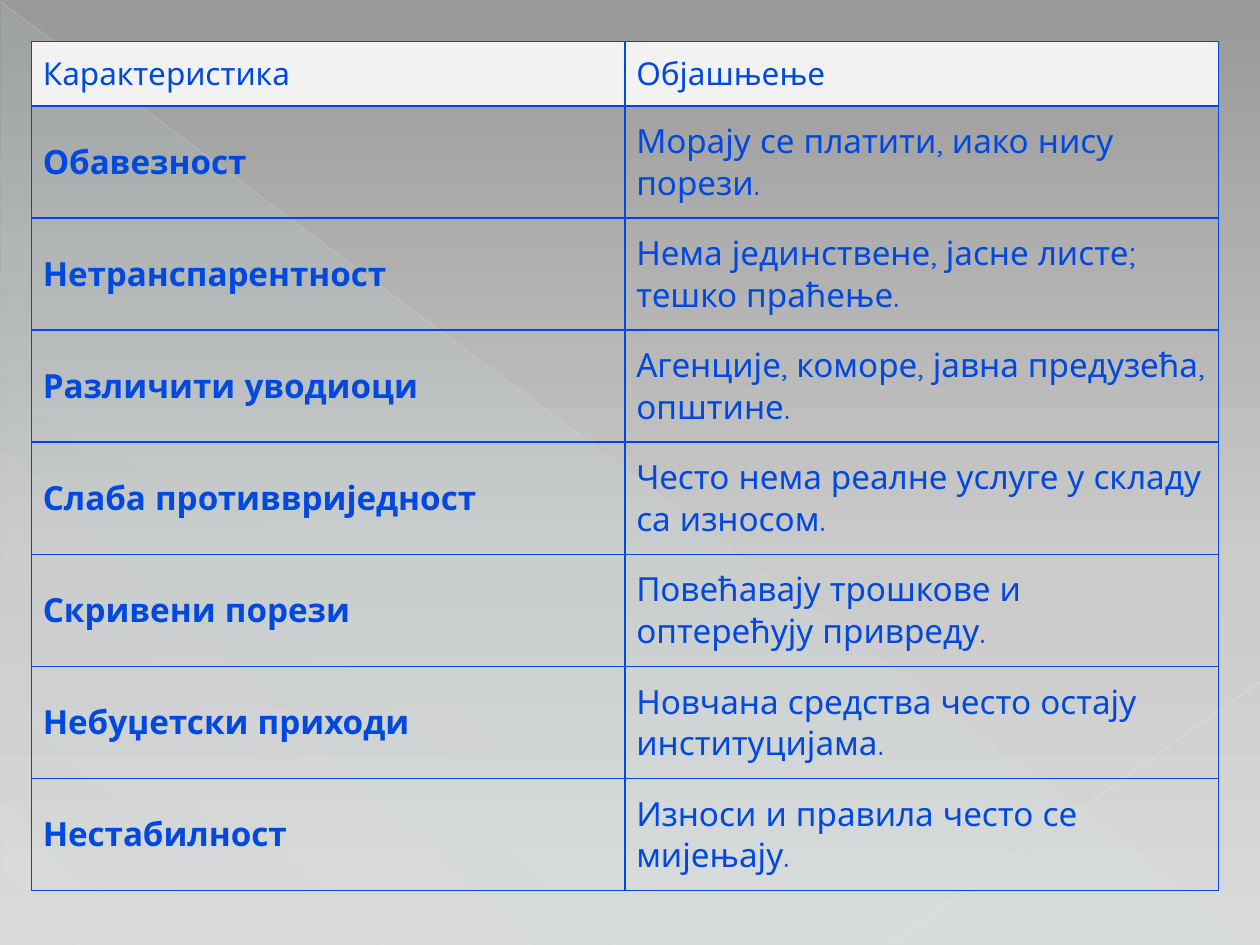
from lxml import etree
from pptx import Presentation
from pptx.dml.color import RGBColor
from pptx.enum.shapes import MSO_CONNECTOR, MSO_SHAPE
from pptx.enum.text import MSO_ANCHOR
from pptx.oxml.ns import qn
from pptx.util import Inches, Pt

STRAIGHT = MSO_CONNECTOR.STRAIGHT
RIGHT_TRIANGLE = MSO_SHAPE.RIGHT_TRIANGLE
MIDDLE = MSO_ANCHOR.MIDDLE

WIDTH, HEIGHT = 10, 7.5
FONT = "Quicksand"
COLORS = {
    "text": "0049DF",
    "header": "F2F2F2",
    "glow": "D0F1FE",
    "diagonal": "E8E8E8",
    "corner": "EAEAEA",
    "bg_top": "999999",
    "bg_middle": "CBCBCB",
    "bg_bottom": "DADADA",
}

HEADINGS = ("Карактеристика", "Објашњење")
TRAITS = [
    ("Обавезност", "Морају се платити, иако нису порези."),
    ("Нетранспарентност", "Нема јединствене, јасне листе; тешко праћење."),
    ("Различити уводиоци", "Агенције, коморе, јавна предузећа, општине."),
    ("Слаба противвриједност", "Често нема реалне услуге у складу са износом."),
    ("Скривени порези", "Повећавају трошкове и оптерећују привреду."),
    ("Небуџетски приходи", "Новчана средства често остају институцијама."),
    ("Нестабилност", "Износи и правила често се мијењају."),
]
TABLE_LEFT, TABLE_TOP = 0.25, 0.33
COLUMN_WIDTH = 4.71
HEADER_HEIGHT, ROW_HEIGHT = 0.51, 0.89


def rgb(name):
    return RGBColor.from_string(COLORS[name])


def add_color(parent, name, alpha=100):
    color = etree.SubElement(parent, qn("a:srgbClr"), val=COLORS[name])
    if alpha < 100:
        etree.SubElement(color, qn("a:alpha"), val=str(alpha * 1000))


def set_gradient(properties, stops, angle):
    """Replace a solid fill by stops of (position, color, opacity)."""
    gradient = etree.Element(qn("a:gradFill"), rotWithShape="1")
    stop_list = etree.SubElement(gradient, qn("a:gsLst"))
    for position, name, alpha in stops:
        stop = etree.SubElement(stop_list, qn("a:gs"), pos=str(position * 1000))
        add_color(stop, name, alpha)
    etree.SubElement(gradient, qn("a:lin"), ang=str(angle * 60000), scaled="0")
    properties.replace(properties.find(qn("a:solidFill")), gradient)


def paint_background(slide):
    slide.background.fill.solid()
    stops = [(0, "bg_top", 100), (60, "bg_middle", 100), (100, "bg_bottom", 100)]
    set_gradient(next(slide.element.iter(qn("p:bgPr"))), stops, 90)


def add_glow(slide):
    glow = slide.shapes.add_shape(
        RIGHT_TRIANGLE, Inches(0.01), Inches(0.02),
        Inches(WIDTH - 0.02), Inches(HEIGHT - 0.02))
    glow.shadow.inherit = False
    glow.line.fill.background()
    glow.fill.solid()
    stops = [(0, "glow", 10), (70, "glow", 8), (100, "glow", 1)]
    set_gradient(glow.element.spPr, stops, 133)


def add_ray(slide, start, end, color, width, alpha):
    ray = slide.shapes.add_connector(STRAIGHT, *map(Inches, start + end))
    ray.line.width = Pt(width)
    ray.line.color.rgb = rgb(color)
    solid = ray.line._ln.find(qn("a:solidFill"))
    solid.clear()
    add_color(solid, color, alpha)
    etree.SubElement(ray.element.spPr, qn("a:effectLst"))


def write_text(cell, text, *, size, bold=False, color="text"):
    run = cell.text_frame.paragraphs[0].add_run()
    run.text = text
    run.font.name = FONT
    run.font.size = Pt(size)
    run.font.bold = bold
    run.font.color.rgb = rgb(color)


def style_cell(cell, fill=None):
    cell.vertical_anchor = MIDDLE
    cell.margin_left = cell.margin_right = Inches(0.09)
    cell.margin_top = cell.margin_bottom = Inches(0.05)
    # Borders come before the fill in the cell properties
    properties = cell._tc.get_or_add_tcPr()
    for side in ("lnL", "lnR", "lnT", "lnB"):
        border = etree.SubElement(properties, qn(f"a:{side}"), w=str(Pt(1)))
        add_color(etree.SubElement(border, qn("a:solidFill")), "text")
    if fill:
        cell.fill.solid()
        cell.fill.fore_color.rgb = rgb(fill)
    else:
        cell.fill.background()


def add_traits_table(slide):
    rows = [HEADINGS] + TRAITS
    heights = [HEADER_HEIGHT] + [ROW_HEIGHT] * len(TRAITS)
    table = slide.shapes.add_table(
        len(rows), len(HEADINGS), Inches(TABLE_LEFT), Inches(TABLE_TOP),
        Inches(COLUMN_WIDTH * len(HEADINGS)), Inches(sum(heights))).table
    table.first_row = table.horz_banding = False
    for column in table.columns:
        column.width = Inches(COLUMN_WIDTH)
    for r, (texts, height) in enumerate(zip(rows, heights)):
        table.rows[r].height = Inches(height)
        is_header = r == 0
        for c, text in enumerate(texts):
            cell = table.cell(r, c)
            style_cell(cell, "header" if is_header else None)
            write_text(cell, text, size=18 if is_header else 19,
                       bold=not is_header and c == 0)


def main():
    prs = Presentation()
    prs.slide_width, prs.slide_height = Inches(WIDTH), Inches(HEIGHT)
    slide = prs.slides.add_slide(prs.slide_layouts[6])

    # Backdrop with its diagonal light
    paint_background(slide)
    add_glow(slide)
    add_ray(slide, (0, 0.01), (9.99, 7.49), "diagonal", 0.39, 35)
    add_ray(slide, (10, 5.41), (7.07, 7.49), "corner", 0.47, 45)

    # Traits and their explanations
    add_traits_table(slide)
    prs.save("out.pptx")


if __name__ == "__main__":
    main()
